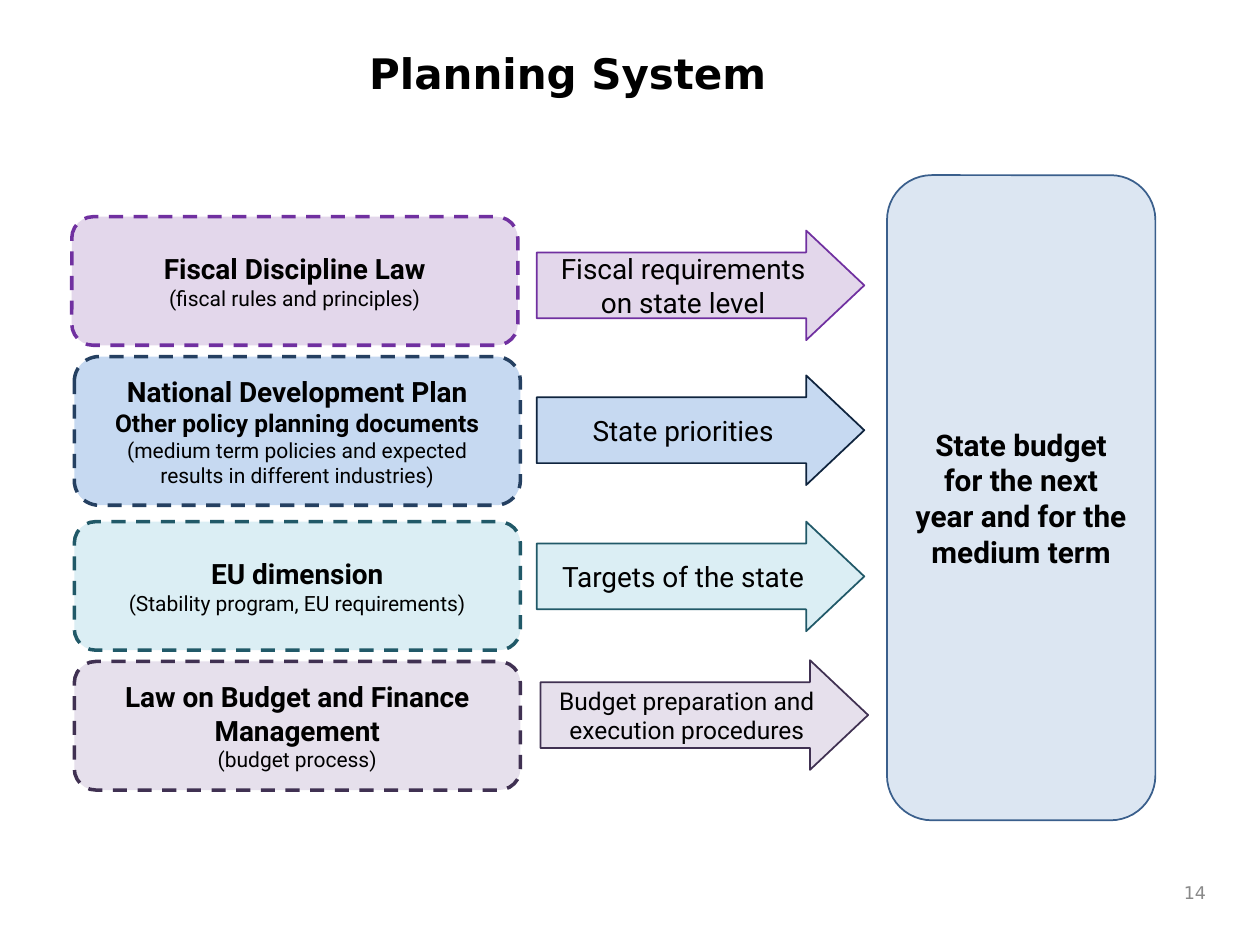
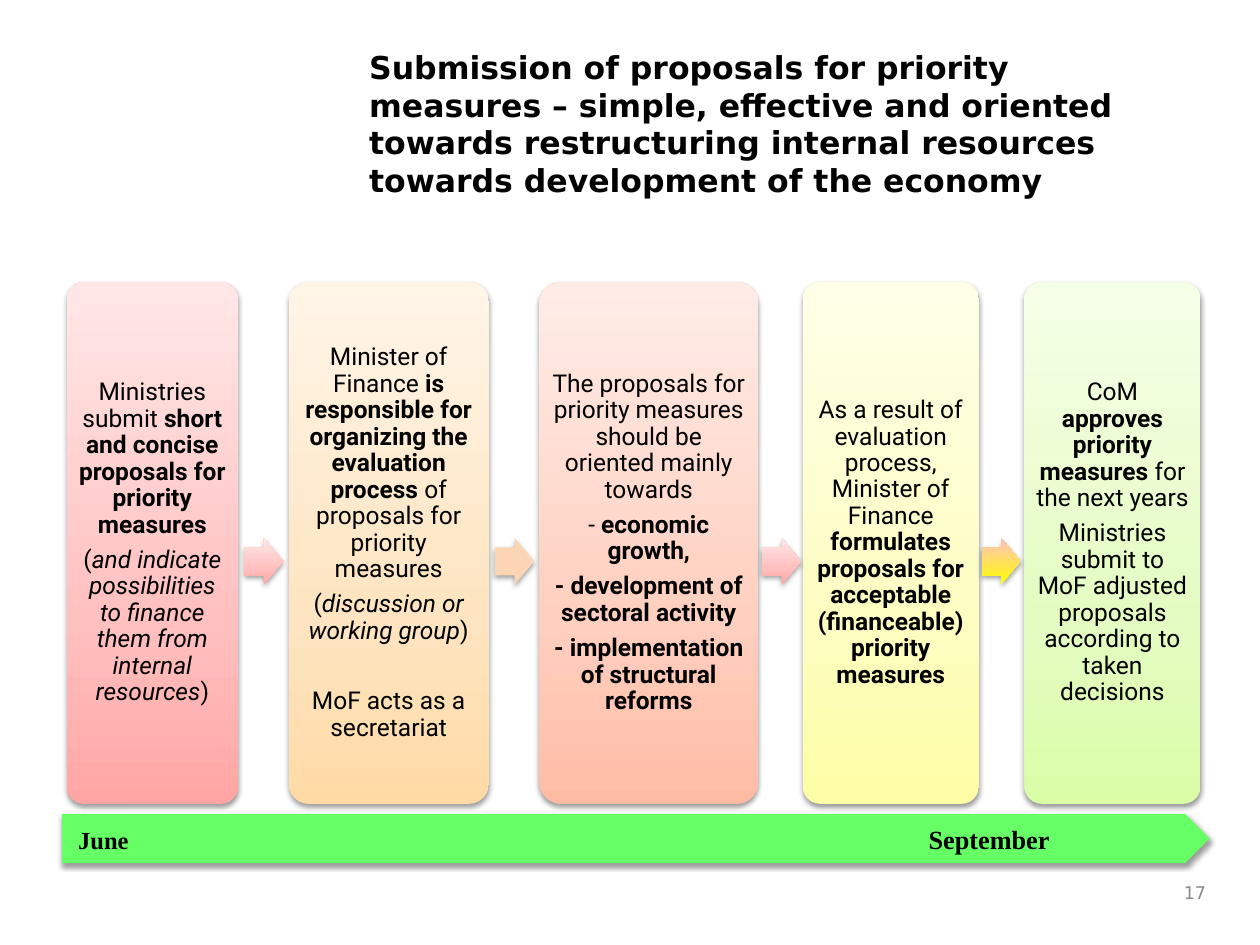
from lxml import etree
from pptx import Presentation
from pptx.dml.color import RGBColor
from pptx.enum.dml import MSO_LINE
from pptx.enum.shapes import MSO_SHAPE
from pptx.enum.text import MSO_ANCHOR, MSO_AUTO_SIZE, PP_ALIGN
from pptx.oxml.ns import qn
from pptx.util import Inches, Pt

ROUNDED = MSO_SHAPE.ROUNDED_RECTANGLE
ARROW = MSO_SHAPE.RIGHT_ARROW
PENTAGON = MSO_SHAPE.PENTAGON
DASH = MSO_LINE.DASH
TOP, MIDDLE = MSO_ANCHOR.TOP, MSO_ANCHOR.MIDDLE
LEFT, CENTER, RIGHT = PP_ALIGN.LEFT, PP_ALIGN.CENTER, PP_ALIGN.RIGHT

COLUMNS, ROWS = 100, 75
CELL = Inches(0.1)
TITLE_ONLY = 5
TITLE_FONT, BODY_FONT, TIME_FONT = "DejaVu Sans", "Roboto", "Times New Roman"

BLACK = RGBColor(0x00, 0x00, 0x00)
GREY = RGBColor(0x89, 0x89, 0x89)
LILAC, PURPLE = RGBColor(0xE3, 0xD7, 0xEB), RGBColor(0x70, 0x30, 0xA0)
SKY, NAVY = RGBColor(0xC6, 0xD9, 0xF1), RGBColor(0x25, 0x40, 0x61)
INK = RGBColor(0x0F, 0x24, 0x3E)
AQUA, TEAL = RGBColor(0xDB, 0xEE, 0xF4), RGBColor(0x21, 0x59, 0x68)
MAUVE, PLUM = RGBColor(0xE6, 0xE0, 0xEC), RGBColor(0x40, 0x31, 0x52)
ICE, STEEL = RGBColor(0xDC, 0xE6, 0xF2), RGBColor(0x3A, 0x5F, 0x8C)
PEACH = RGBColor(0xFC, 0xD5, 0xB5)
GREEN = RGBColor(0x66, 0xFF, 0x66)


def shades(*colours):
    """Pair a dark, a middle and a light colour with their gradient stops."""
    return list(zip((0, 35, 100), map(RGBColor.from_string, colours)))


ROSE = shades("FFA6A5", "FFC0BF", "FFE7E7")
ORANGE = shades("FFDAA5", "FEE4C0", "FFF5E7")
CORAL = shades("FFBCA5", "FFCFBF", "FFECE7")
LEMON = shades("FEFEA6", "FDFDC1", "FFFFE7")
LIME = shades("DAFDA7", "E4FCC2", "F5FFE7")
SUNRISE = [(0, RGBColor(0xFF, 0xFF, 0x00)), (100, RGBColor(0xFF, 0xC0, 0xBF))]

SOURCES = [
    (5.7, 17.2, 10.2, LILAC, PURPLE,
     [("Fiscal Discipline Law", 16, "b"), ("(fiscal rules and principles)", 12, "")]),
    (5.9, 28.3, 11.8, SKY, NAVY,
     [("National Development Plan", 16, "b"),
      ("Other policy planning documents", 14, "b"),
      ("(medium term policies and expected results in different industries)", 12, "")]),
    (5.9, 41.4, 10.2, AQUA, TEAL,
     [("EU dimension", 16, "b"), ("(Stability program, EU requirements)", 12, "")]),
    (5.9, 52.5, 10.2, MAUVE, PLUM,
     [("Law on Budget and Finance Management", 16, "b"), ("(budget process)", 12, "")]),
]
INPUTS = [
    (42.6, 18.3, LILAC, PURPLE, "Fiscal requirements on state level", 16),
    (42.6, 29.8, SKY, INK, "State priorities", 16),
    (42.6, 41.4, AQUA, TEAL, "Targets of the state", 16),
    (42.9, 52.4, MAUVE, PLUM, "Budget preparation and execution procedures", 14),
]
STEPS = [
    (5.3, 13.6, ROSE,
     [[("Ministries submit ", ""),
       ("short and concise proposals for priority measures", "b")],
      [("(", ""),
       ("and indicate possibilities to finance them from internal resources", "i"),
       (")", "")]]),
    (22.9, 15.9, ORANGE,
     [[("Minister of Finance ", ""),
       ("is responsible for organizing the evaluation process", "b"),
       (" of proposals for priority measures", "")],
      [("(", ""), ("discussion or working group", "i"), (")", "")],
      [("MoF acts as a secretariat", "")]]),
    (42.8, 17.4, CORAL,
     [[("The proposals for priority measures should be oriented mainly towards", "")],
      [("- ", ""), ("economic growth,", "b")],
      [("- development of sectoral activity", "b")],
      [("- implementation of structural reforms", "b")]]),
    (63.7, 14, LEMON,
     [[("As a result of evaluation process, Minister of Finance ", ""),
       ("formulates proposals for acceptable (financeable) priority measures", "b")]]),
    (81.3, 14, LIME,
     [[("CoM ", ""), ("approves priority measures ", "b"), ("for the next years", "")],
      [("Ministries submit to MoF adjusted proposals according to taken decisions", "")]]),
]
LINKS = [(19.4, ROSE), (39.3, PEACH), (60.5, ROSE), (77.9, SUNRISE)]


def grid(*cells):
    """Turn columns and rows into lengths."""
    return [round(cell * CELL) for cell in cells]


def write(shape, paras, font=BODY_FONT, align=CENTER, anchor=MIDDLE, colour=BLACK):
    """Fill a shape with paragraphs made of (text, size, style) spans."""
    frame = shape.text_frame
    frame.word_wrap = True
    frame.auto_size = MSO_AUTO_SIZE.NONE
    frame.vertical_anchor = anchor
    for index, spans in enumerate(paras):
        para = frame.add_paragraph() if index else frame.paragraphs[0]
        para.alignment = align
        for text, size, style in spans:
            span = para.add_run()
            span.text = text
            span.font.name, span.font.size = font, Pt(size)
            span.font.bold, span.font.italic = "b" in style, "i" in style
            span.font.color.rgb = colour
    return frame


def paint(shape, fill):
    """Fill with one colour, or with gradient stops rising from the bottom."""
    if isinstance(fill, RGBColor):
        shape.fill.solid()
        shape.fill.fore_color.rgb = fill
        return
    shape.fill.gradient()
    shape.fill.gradient_angle = 90
    stops = next(shape.element.spPr.iter(qn("a:gsLst")))
    for stop in list(stops):
        stops.remove(stop)
    for position, colour in fill:
        stop = etree.SubElement(stops, qn("a:gs"), pos=str(position * 1000))
        etree.SubElement(stop, qn("a:srgbClr"), val=str(colour))


def add_block(page, kind, place, fill, line=None, width=1, adjust=()):
    """Add a flat preset shape with an optional outline."""
    block = page.shapes.add_shape(kind, *grid(*place))
    for index, value in enumerate(adjust):
        block.adjustments[index] = value
    paint(block, fill)
    if line is None:
        block.line.fill.background()
    else:
        block.line.color.rgb = line
        block.line.width = Pt(width)
    block.shadow.inherit = False
    return block


def add_raised(page, kind, place, fill, adjust=()):
    """Add a shape without outline that casts a soft shadow downwards."""
    block = add_block(page, kind, place, fill, adjust=adjust)
    effects = block.element.spPr.find(qn("a:effectLst"))
    shadow = etree.SubElement(effects, qn("a:outerShdw"), blurRad=str(Pt(3.1)),
                              dist=str(Pt(1.6)), dir="5400000", rotWithShape="0")
    colour = etree.SubElement(shadow, qn("a:srgbClr"), val=str(BLACK))
    etree.SubElement(colour, qn("a:alpha"), val="38000")
    return block


def add_page(deck, title, size, number):
    """Start a page with its title and page number."""
    page = deck.slides.add_slide(deck.slide_layouts[TITLE_ONLY])
    heading = page.shapes.title
    heading.left, heading.top, heading.width, heading.height = grid(28.3, 3.3, 66.7, 11.7)
    write(heading, [[(title, size, "b")]], TITLE_FONT, LEFT, TOP)
    box = page.shapes.add_textbox(*grid(92, 69.2, 4.7, 3.3))
    write(box, [[(number, 10, "")]], TITLE_FONT, RIGHT, colour=GREY)
    return page


def add_step(page, left, width, fill, paras):
    """Add one card of the process."""
    card = add_raised(page, ROUNDED, (left, 22.4, width, 41.4), fill, [0.1])
    frame = write(card, [[(text, 14, style) for text, style in spans] for spans in paras])
    frame.margin_left = frame.margin_right = Inches(0.05)
    for para in frame.paragraphs:
        para.line_spacing = 0.9
        para.space_after = Pt(4.9)
    return frame


def add_timeline(page):
    """Add the band that runs from the first month to the last."""
    band = add_raised(page, PENTAGON, (4.9, 64.6, 91.1, 3.9), GREEN)
    frame = write(band, [[("June\t", 14, "b"), ("September", 15, "b")]], TIME_FONT, LEFT)
    frame.margin_left = Inches(0.13)
    tabs = etree.SubElement(frame.paragraphs[0]._p.get_or_add_pPr(), qn("a:tabLst"))
    etree.SubElement(tabs, qn("a:tab"), pos=str(Inches(6.75)), algn="l")


def build_planning(deck):
    """Show what feeds the state budget."""
    page = add_page(deck, "Planning System", 24, "14")
    for left, top, height, fill, line, lines in SOURCES:
        source = add_block(page, ROUNDED, (left, top, 35.4, height), fill, line, 2)
        source.line.dash_style = DASH
        write(source, [[span] for span in lines])
    for left, top, fill, line, text, size in INPUTS:
        arrow = add_block(page, ARROW, (left, top, 26, 8.7), fill, line,
                          adjust=(0.6, 0.53))
        write(arrow, [[(text, size, "")]])
    budget = add_block(page, ROUNDED, (70.4, 13.9, 21.3, 51.2), ICE, STEEL)
    write(budget, [[("State budget for the next year and for the medium term", 17, "b")]])


def build_submission(deck):
    """Show the steps of submitting proposals."""
    page = add_page(deck, "Submission of proposals for priority measures – simple, "
                    "effective and oriented towards restructuring internal resources "
                    "towards development of the economy", 18, "17")
    frames = [add_step(page, *step) for step in STEPS]
    frames[1].paragraphs[-1].space_before = Pt(20)
    for left, fill in LINKS:
        add_raised(page, ARROW, (left, 42.7, 3.1, 3.7), fill, (0.6, 0.5))
    add_timeline(page)


def main():
    """Build the deck and save it."""
    deck = Presentation()
    deck.slide_width, deck.slide_height = grid(COLUMNS, ROWS)
    build_planning(deck)
    build_submission(deck)
    deck.save("out.pptx")


if __name__ == "__main__":
    main()
